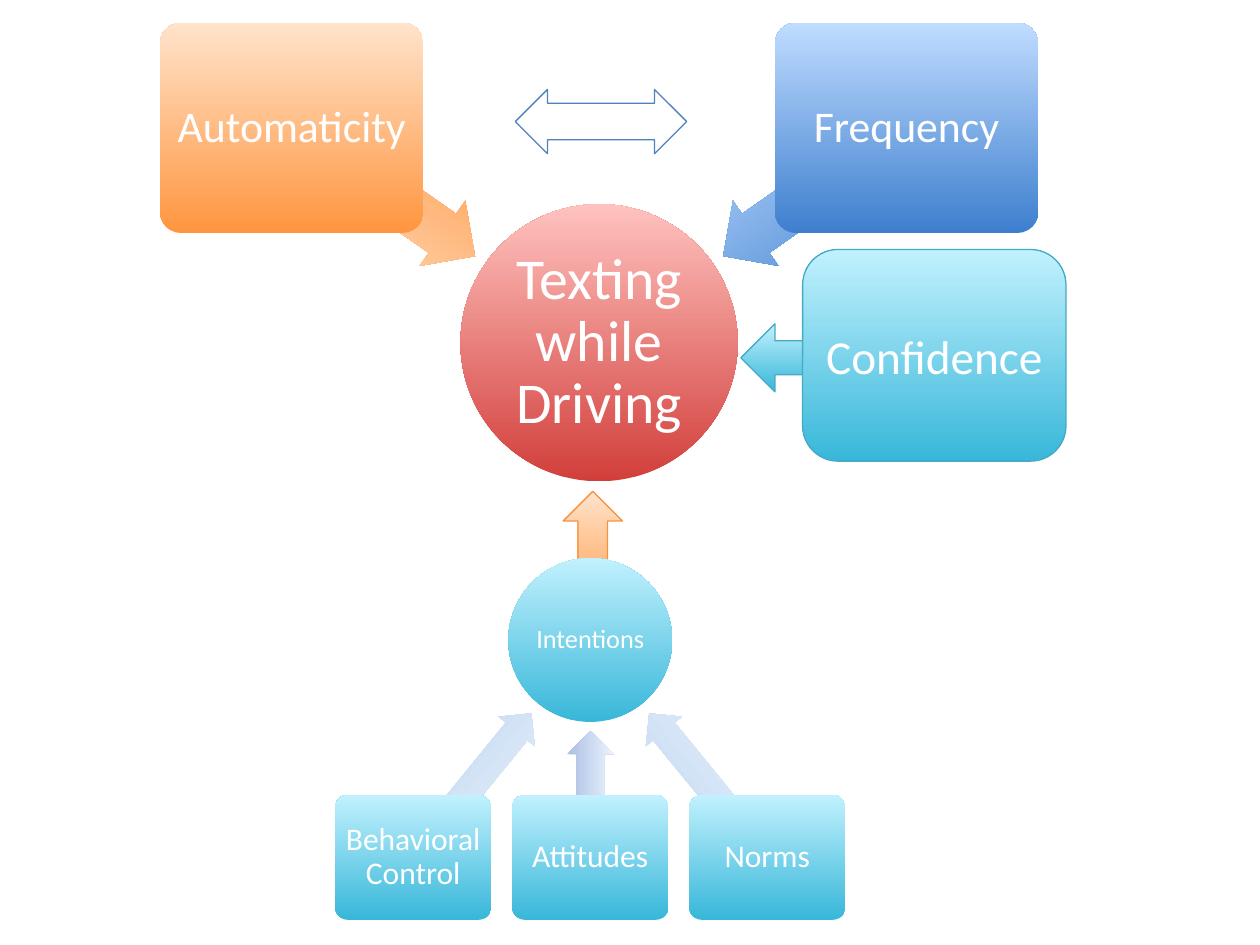
from dataclasses import dataclass

from pptx import Presentation
from pptx.dml.color import RGBColor
from pptx.enum.shapes import MSO_SHAPE as SHAPE
from pptx.enum.text import MSO_ANCHOR, PP_ALIGN
from pptx.util import Inches, Pt


@dataclass(frozen=True)
class Theme:
    """Fonts, type sizes and (dark, light) gradient pairs."""
    font: str = "Calibri"
    white: str = "FFFFFF"
    hub_size: int = 33
    confidence_size: int = 27
    factor_size: int = 25
    card_size: int = 18
    intentions_size: int = 15
    line_width: float = 0.75
    red: tuple = ("D23F3B", "FFC2BF")
    orange: tuple = ("FF953F", "FFE3CB")
    blue: tuple = ("3E7FCE", "BFDCFF")
    aqua: tuple = ("38B7D9", "C1F1FE")
    pale: tuple = ("BED4ED", "EAF3FF")
    slate: tuple = ("ACBFE2", "EAF3FF")
    orange_line: str = "F6923F"
    aqua_line: str = "45AAC5"
    blue_line: str = "4F81BD"


THEME = Theme()


def add_shape(slide, kind, box, fill, adj=(), line=None, rotation=0):
    """Add a preset shape with a solid or vertical gradient fill."""
    sp = slide.shapes.add_shape(kind, *map(Inches, box))
    sp.shadow.inherit = False
    sp.rotation = rotation
    for i, value in enumerate(adj):
        sp.adjustments[i] = value
    if isinstance(fill, tuple):
        sp.fill.gradient()
        sp.fill.gradient_angle = 90
        for stop, color in zip(sp.fill.gradient_stops, fill):
            stop.color.rgb = RGBColor.from_string(color)
    else:
        sp.fill.solid()
        sp.fill.fore_color.rgb = RGBColor.from_string(fill)
    if line:
        sp.line.color.rgb = RGBColor.from_string(line)
        sp.line.width = Pt(THEME.line_width)
    else:
        sp.line.fill.background()
    return sp


def add_label(sp, text, size, inset, spacing=0.9):
    """Write a centred white label inside a shape."""
    tf = sp.text_frame
    tf.word_wrap = True
    tf.vertical_anchor = MSO_ANCHOR.MIDDLE
    tf.margin_left = tf.margin_right = Inches(inset)
    tf.margin_top = tf.margin_bottom = Inches(inset)
    p = tf.paragraphs[0]
    p.text = text
    p.alignment = PP_ALIGN.CENTER
    p.line_spacing = spacing
    p.font.name = THEME.font
    p.font.size = Pt(size)
    p.font.color.rgb = RGBColor.from_string(THEME.white)


def add_driving(slide, x, y, w, h):
    """Draw the hub circle with a factor card at each upper corner."""
    hub, card_w, card_h, arrow_w, arrow_h = 2.2, 2.09, 1.67, 1.77, 0.63
    circle = add_shape(slide, SHAPE.OVAL,
                       (x + (w - hub) / 2, y + h - hub, hub, hub), THEME.red)
    add_label(circle, "Texting while Driving", THEME.hub_size, 0.02)
    factors = (("Automaticity", THEME.orange, -1, 215),
               ("Frequency", THEME.blue, 1, 325))
    for text, fill, side, angle in factors:
        center = x + w / 2 + side * 1.71
        add_shape(slide, SHAPE.LEFT_ARROW,
                  (center - arrow_w / 2, y + 1.03, arrow_w, arrow_h),
                  fill, (0.6, 0.5), rotation=angle)
        left = x if side < 0 else x + w - card_w
        card = add_shape(slide, SHAPE.ROUNDED_RECTANGLE,
                         (left, y, card_w, card_h), fill, (0.1,))
        add_label(card, text, THEME.factor_size, 0.05)


def add_intentions(slide, x, y, w, h):
    """Draw the intentions circle fed by a row of three cards."""
    hub, card_w, card_h, arrow_h = 1.3, 1.24, 0.99, 0.37
    circle = add_shape(slide, SHAPE.OVAL,
                       (x + (w - hub) / 2, y, hub, hub), THEME.aqua)
    add_label(circle, "Intentions", THEME.intentions_size, 0.01)
    sources = (("Behavioral Control", THEME.pale, 1.48, 1.62),
               ("Attitudes", THEME.slate, 1.01, 1.69),
               ("Norms", THEME.pale, 1.48, 1.62))
    for i, (text, fill, arrow_w, top) in enumerate(sources):
        side = i - 1
        center = x + w / 2 + side * 0.935
        add_shape(slide, SHAPE.LEFT_ARROW,
                  (center - arrow_w / 2, y + top, arrow_w, arrow_h),
                  fill, (0.6, 0.5), rotation=90 - side * 39.2)
        card = add_shape(slide, SHAPE.ROUNDED_RECTANGLE,
                         (x + i * (w - card_w) / 2, y + h - card_h, card_w, card_h),
                         THEME.aqua, (0.1,))
        add_label(card, text, THEME.card_size, 0.04)


def add_confidence(slide, x, y, w, h):
    """Draw the confidence card with its arrow towards the hub."""
    card_w, arrow_w, arrow_h = 2.09, 1.15, 0.54
    add_shape(slide, SHAPE.LEFT_ARROW,
              (x, y + 0.59, arrow_w, arrow_h),
              THEME.aqua, (0.5, 0.5), THEME.aqua_line)
    card = add_shape(slide, SHAPE.ROUNDED_RECTANGLE,
                     (x + w - card_w, y, card_w, h),
                     THEME.aqua, (0.167,), THEME.aqua_line)
    add_label(card, "Confidence", THEME.confidence_size, 0.05, 1.0)


def main():
    """Build the slide and save it."""
    prs = Presentation()
    prs.slide_width, prs.slide_height = Inches(10), Inches(7.5)
    slide = prs.slides.add_slide(prs.slide_layouts[6])
    add_shape(slide, SHAPE.UP_ARROW, (4.47, 3.9, 0.47, 1.04),
              THEME.orange, (0.5, 0.5), THEME.orange_line)
    add_driving(slide, 1.27, 0.18, 6.97, 3.64)
    add_intentions(slide, 2.66, 4.43, 4.05, 2.87)
    add_shape(slide, SHAPE.LEFT_RIGHT_ARROW, (4.09, 0.71, 1.36, 0.51),
              THEME.white, (0.57, 0.5), THEME.blue_line)
    add_confidence(slide, 5.88, 1.98, 2.58, 1.68)
    prs.save("out.pptx")


if __name__ == "__main__":
    main()
